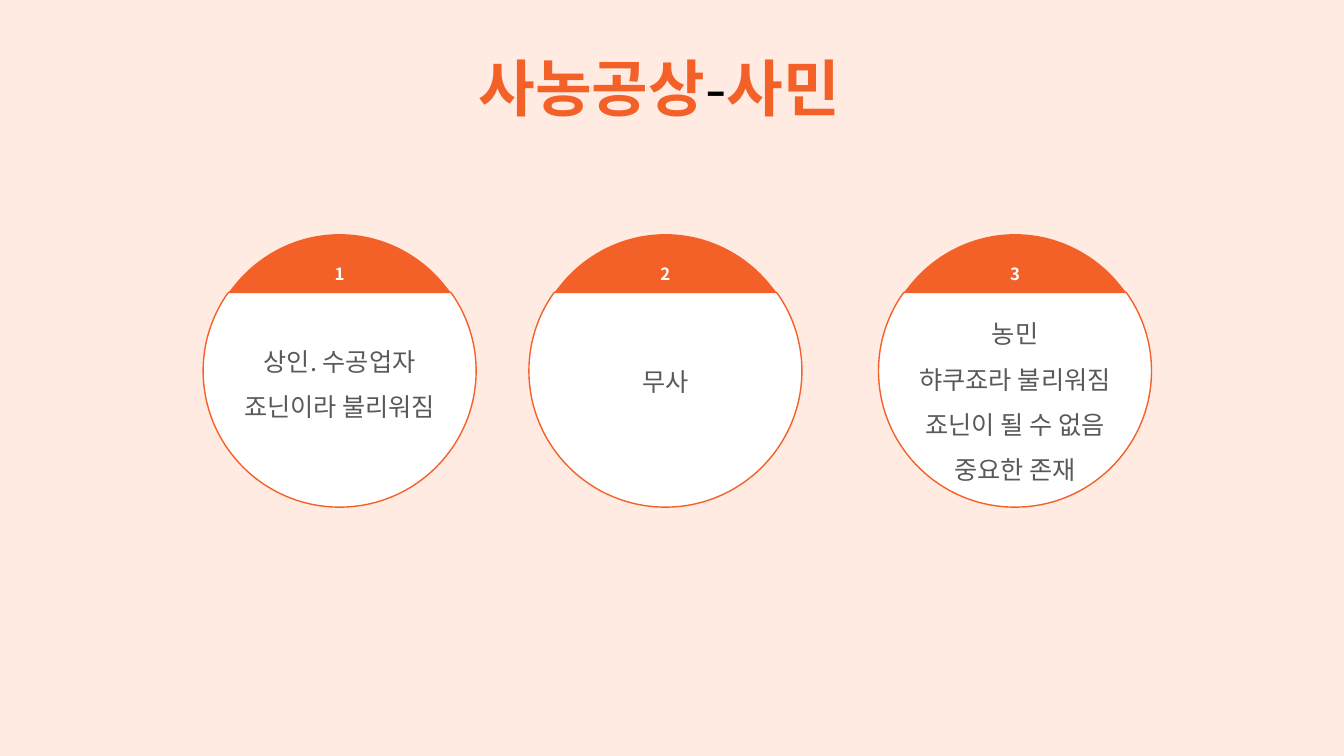
"""Build a slide showing the four classes of society as three capped circles."""
from dataclasses import dataclass

from lxml.etree import SubElement
from pptx import Presentation
from pptx.dml.color import RGBColor
from pptx.enum.text import MSO_AUTO_SIZE, PP_ALIGN
from pptx.oxml.ns import qn
from pptx.slide import Slide
from pptx.util import Cm, Pt

PEACH = RGBColor(0xFF, 0xEB, 0xE2)
ORANGE = RGBColor(0xF4, 0x61, 0x28)
WHITE = RGBColor(0xFF, 0xFF, 0xFF)
BLACK = RGBColor(0, 0, 0)
GRAY = RGBColor(0x59, 0x59, 0x59)
FONT = "Noto Sans CJK KR"

CENTER_Y = 9.34
CHORD = (2.8, -1.97)
CAP_RIGHT = [(0, -3.44), (1.07, -3.44), (2.03, -2.93), (2.64, -2.17), CHORD]
BOWL_RIGHT = [CHORD, (2.84, -1.92), (3.22, -1.37), (3.44, -0.7), (3.44, 0),
              (3.44, 1.9), (1.9, 3.44), (0, 3.44)]


def mirrored(points: list[tuple[float, float]]) -> list[tuple[float, float]]:
    """Return the points reflected to the left side, in reverse order."""
    return [(-x, y) for x, y in reversed(points)]


CAP = CAP_RIGHT + mirrored(CAP_RIGHT)
BOWL = mirrored([CHORD]) + BOWL_RIGHT + mirrored(BOWL_RIGHT[:-1])
CAP_SEGMENTS = "CLLLC"
BOWL_SEGMENTS = "LLCCCCL"


@dataclass
class Run:
    text: str
    color: RGBColor
    bold: bool = False


@dataclass
class SocialClass:
    center_x: float
    text_top: float
    text_height: float
    lines: list[str]


CLASSES = [
    SocialClass(8.56, 8.21, 2.57, ["상인. 수공업자", "죠닌이라 불리워짐"]),
    SocialClass(16.77, 8.72, 2.57, ["무사"]),
    SocialClass(25.58, 7.52, 4.88,
                ["농민", "햐쿠죠라 불리워짐", "죠닌이 될 수 없음", "중요한 존재"]),
]


def add_text(s: Slide, paragraphs: list[list[Run]], *, left: float, top: float,
             width: float, height: float, size: float, spacing: float | None = None,
             wrap: bool = False) -> None:
    """Add a centred text box whose paragraphs are lists of runs."""
    tf = s.shapes.add_textbox(Cm(left), Cm(top), Cm(width), Cm(height)).text_frame
    tf.word_wrap = wrap
    tf.auto_size = MSO_AUTO_SIZE.SHAPE_TO_FIT_TEXT
    for i, runs in enumerate(paragraphs):
        p = tf.add_paragraph() if i else tf.paragraphs[0]
        p.alignment = PP_ALIGN.CENTER
        p.line_spacing = spacing
        for run in runs:
            r = p.add_run()
            r.text = run.text
            r.font.size = Pt(size)
            r.font.bold = run.bold
            r.font.color.rgb = run.color
            r.font.name = FONT
            SubElement(r.font._element, qn("a:ea"), typeface=FONT)


def add_outline(s: Slide, center_x: float, points: list[tuple[float, float]],
                segments: str, fill: RGBColor, line: RGBColor | None = None) -> None:
    """Add a closed outline of lines (L) and cubic curves (C) around a centre."""
    vertices = [(Cm(center_x + x), Cm(CENTER_Y + y)) for x, y in points]
    builder = s.shapes.build_freeform(*vertices[0])
    builder.add_line_segments(vertices[1:], close=True)
    sp = builder.convert_to_shape()
    steps = iter(list(sp._element.iter(qn("a:lnTo"))))
    for segment in segments:
        step = next(steps)
        if segment == "C":
            curve = step.makeelement(qn("a:cubicBezTo"))
            step.addprevious(curve)
            for control in (step, next(steps), next(steps)):
                curve.append(control[0])
                control.getparent().remove(control)
    sp.shadow.inherit = False
    sp.fill.solid()
    sp.fill.fore_color.rgb = fill
    if line is None:
        sp.line.fill.background()
    else:
        sp.line.color.rgb = line
        sp.line.width = Pt(1)


def add_class(s: Slide, number: int, item: SocialClass) -> None:
    """Add one numbered circle with its description."""
    x = item.center_x
    add_outline(s, x, CAP, CAP_SEGMENTS, ORANGE)
    add_outline(s, x, BOWL, BOWL_SEGMENTS, WHITE, ORANGE)
    add_text(s, [[Run(str(number), WHITE, True)]], left=x - 0.38, top=6.27,
             width=0.76, height=0.91, size=12, spacing=1.5)
    add_text(s, [[Run(text, GRAY)] for text in item.lines], left=x - 3.63,
             top=item.text_top, width=7.26, height=item.text_height,
             size=18, spacing=1.5, wrap=True)


def main() -> None:
    """Create the presentation and save it."""
    prs = Presentation()
    prs.slide_width, prs.slide_height = Cm(33.87), Cm(19.05)
    s = prs.slides.add_slide(prs.slide_layouts[6])
    s.background.fill.solid()
    s.background.fill.fore_color.rgb = PEACH
    title = [Run("사농공상", ORANGE, True), Run("-", BLACK), Run("사민", ORANGE, True)]
    add_text(s, [title], left=11.33, top=1.14, width=10.57, height=2.59, size=44)
    for number, item in enumerate(CLASSES, start=1):
        add_class(s, number, item)
    prs.save("out.pptx")


if __name__ == "__main__":
    main()
